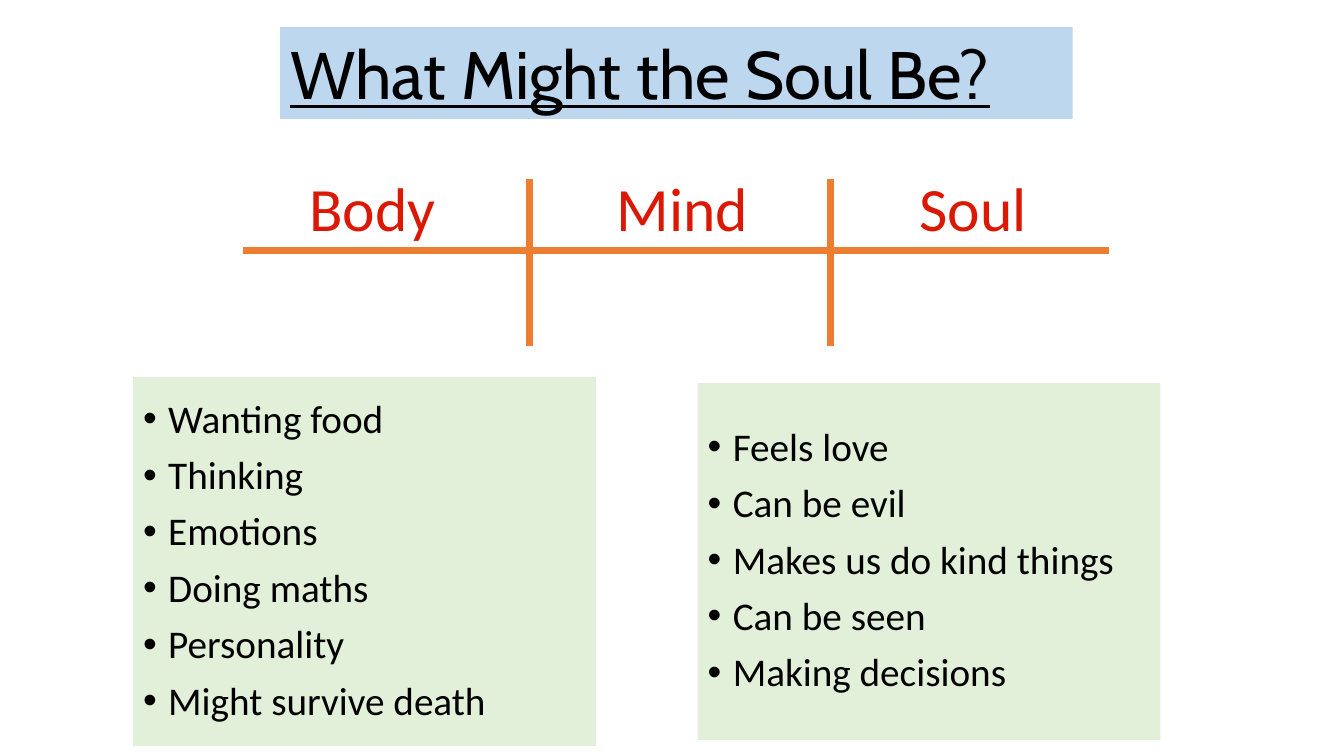
from lxml import etree
from pptx import Presentation
from pptx.dml.color import RGBColor
from pptx.enum.shapes import MSO_CONNECTOR, MSO_SHAPE
from pptx.enum.text import MSO_ANCHOR, PP_ALIGN
from pptx.oxml.ns import qn
from pptx.util import Emu, Pt

LEFT = PP_ALIGN.LEFT
MIDDLE = MSO_ANCHOR.MIDDLE
RECTANGLE = MSO_SHAPE.RECTANGLE
STRAIGHT = MSO_CONNECTOR.STRAIGHT
PX = 9144
COLOURS = {
    "text": "000000",
    "heading": "DA1804",
    "rule": "ED7D31",
    "title": "BDD7EE",
    "list": "E2F0D9",
}


class SoulSlide:
    """Draws the elements of the slide in one style, with lengths in px."""

    def __init__(self, presentation):
        self.slide = presentation.slides.add_slide(presentation.slide_layouts[6])

    def colour(self, name):
        return RGBColor.from_string(COLOURS[name])

    def style_text(self, paragraph, text, size, font="Calibri", colour="text"):
        paragraph.text = text
        paragraph.alignment = LEFT
        paragraph.font.name = font
        paragraph.font.size = Pt(size)
        paragraph.font.color.rgb = self.colour(colour)

    def panel(self, box, fill):
        shape = self.slide.shapes.add_shape(RECTANGLE, *(Emu(v * PX) for v in box))
        shape.shadow.inherit = False
        shape.fill.solid()
        shape.fill.fore_color.rgb = self.colour(fill)
        shape.line.fill.background()
        shape.text_frame.word_wrap = True
        shape.text_frame.vertical_anchor = MIDDLE
        return shape.text_frame

    def title(self, box, text):
        paragraph = self.panel(box, "title").paragraphs[0]
        self.style_text(paragraph, text, 48, "Cabin")
        paragraph.font.underline = True

    def headings(self, box, labels, stops):
        shape = self.slide.shapes.add_textbox(*(Emu(v * PX) for v in box))
        frame = shape.text_frame
        frame.word_wrap = True
        frame.vertical_anchor = MIDDLE
        paragraph = frame.paragraphs[0]
        properties = paragraph._p.get_or_add_pPr()
        tabs = etree.SubElement(properties, qn("a:tabLst"))
        for stop in stops:
            etree.SubElement(tabs, qn("a:tab"), pos=str(stop * PX), algn="l")
        text = "".join("\t" + label for label in labels)
        self.style_text(paragraph, text, 44, colour="heading")
        paragraph.line_spacing = 0.9

    def bullets(self, box, items):
        frame = self.panel(box, "list")
        for index, item in enumerate(items):
            paragraph = frame.add_paragraph() if index else frame.paragraphs[0]
            properties = paragraph._p.get_or_add_pPr()
            properties.set("marL", str(25 * PX))
            properties.set("indent", str(-25 * PX))
            etree.SubElement(properties, qn("a:buFont"), typeface="Arial")
            etree.SubElement(properties, qn("a:buChar"), char="•")
            self.style_text(paragraph, item, 28)
            paragraph.line_spacing = 0.9
            paragraph.space_before = Pt(10 if index else 0)

    def rule(self, *ends):
        connector = self.slide.shapes.add_connector(STRAIGHT, *(Emu(v * PX) for v in ends))
        connector.line.color.rgb = self.colour("rule")
        connector.line.width = Pt(5)
        etree.SubElement(connector._element.spPr, qn("a:effectLst"))


def main():
    presentation = Presentation()
    presentation.slide_width = Emu(1333 * PX)
    presentation.slide_height = Emu(750 * PX)
    soul = SoulSlide(presentation)
    soul.headings((202, 147, 900, 125), ("Body", "Mind", "Soul"), (95, 400, 700))
    soul.bullets((132, 374, 459, 366), (
        "Wanting food", "Thinking", "Emotions", "Doing maths",
        "Personality", "Might survive death",
    ))
    soul.bullets((692, 380, 459, 354), (
        "Feels love", "Can be evil", "Makes us do kind things",
        "Can be seen", "Making decisions",
    ))
    for x in (525, 824):
        soul.rule(x, 178, x, 343)
    soul.rule(241, 249, 1100, 249)
    soul.title((278, 27, 786, 91), "What Might the Soul Be?")
    presentation.save("out.pptx")


if __name__ == "__main__":
    main()
